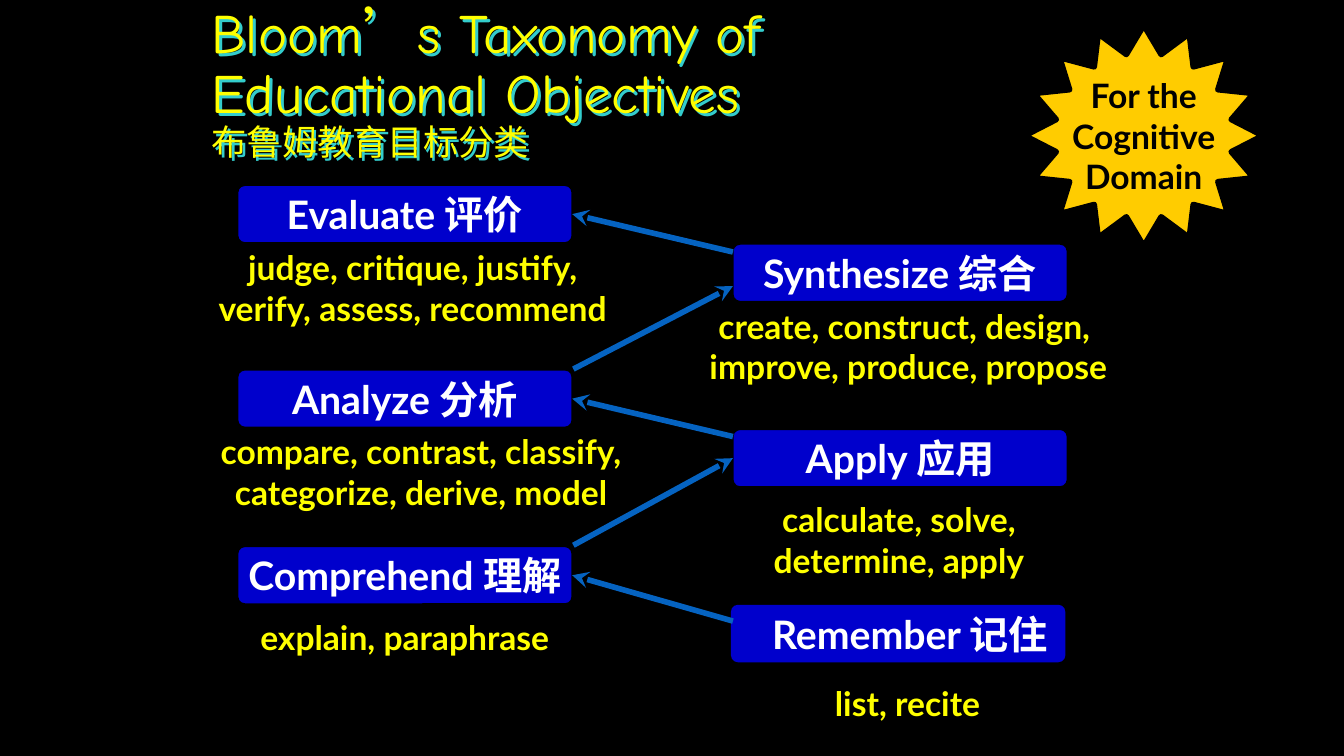
from dataclasses import dataclass

import pptx
import pptx.dml.color
import pptx.enum.shapes
import pptx.enum.text
import pptx.oxml
import pptx.oxml.ns
import pptx.util
from pptx.util import Cm, Pt

ANCHOR = pptx.enum.text.MSO_ANCHOR
ALIGN = pptx.enum.text.PP_ALIGN
SHAPE = pptx.enum.shapes.MSO_SHAPE
NAMESPACE = pptx.oxml.ns.nsdecls("a")

BLACK, WHITE, YELLOW = "000000", "FFFFFF", "FFFF00"
BOX_BLUE, ARROW_BLUE = "0000CC", "0563C1"
STAR_GOLD, TITLE_SHADOW = "FFCC00", "33CCCC"

LEFT_COLUMN, RIGHT_COLUMN = 5.99, 18.47
BOX_WIDTH, BOX_HEIGHT = 8.43, 1.45
ARROW_LEFT, ARROW_RIGHT = 14.45, 18.47
LEFT_SIDE, RIGHT_SIDE = 1, 3

FRAME_FORMAT = {
    "margin_left": Cm(0.25), "margin_right": Cm(0.25),
    "margin_top": Cm(0.13), "margin_bottom": Cm(0.13),
    "auto_size": pptx.enum.text.MSO_AUTO_SIZE.NONE,
}


@dataclass
class Level:
    label: str
    left: float
    top: float
    outlined: bool = True


@dataclass
class Words:
    lines: list[str]
    left: float
    top: float
    width: float
    height: float
    wrap: bool = True
    size: float = 24
    colour: str = YELLOW
    anchor: ANCHOR = ANCHOR.TOP


@dataclass
class Step:
    source_y: float
    target_y: float
    target: str
    leftward: bool
    joined: bool = True


LEVELS = [
    Level("Evaluate 评价", LEFT_COLUMN, 4.67),
    Level("Synthesize 综合", RIGHT_COLUMN, 6.15),
    Level("Analyze 分析", LEFT_COLUMN, 9.32),
    Level("Apply 应用", RIGHT_COLUMN, 10.82),
    Level("Comprehend 理解", LEFT_COLUMN, 13.77),
    Level("", 18.42, 15.24, outlined=False),
]

WORDS = [
    Words(["Remember 记住"], 19.05, 15.44, 7.77, 1.07, False, 28, WHITE, ANCHOR.MIDDLE),
    Words(["judge, critique, justify,", "verify, assess, recommend"], 4.24, 6.1, 12.32, 2.31),
    Words(["create, construct, design, ", "improve, produce, propose"], 17.15, 7.57, 11.48, 3.33),
    Words(["compare, contrast, classify, categorize, derive, model"], 4.45, 10.74, 12.32, 2.31),
    Words(["calculate, solve,", "determine, apply"], 18.77, 12.45, 7.77, 2.31, False),
    Words(["explain, paraphrase"], 5.69, 15.42, 9.02, 1.3, False),
    Words(["list, recite"], 20.47, 17.09, 4.8, 1.3, False),
]

STEPS = [
    Step(15.65, 14.6, "Comprehend 理解", leftward=True),
    Step(13.74, 11.66, "Apply 应用", leftward=False),
    Step(11.0, 9.96, "Analyze 分析", leftward=True),
    Step(9.3, 7.21, "Synthesize 综合", leftward=False, joined=False),
    Step(6.35, 5.31, "Evaluate 评价", leftward=True),
]


def rgb(colour: str) -> pptx.dml.color.RGBColor:
    return pptx.dml.color.RGBColor.from_string(colour)


def apply_format(target, values: dict) -> None:
    for name, value in values.items():
        setattr(target, name, value)


def style_run(run, font: str, size: float, colour: str, bold: bool) -> None:
    apply_format(run.font, {"name": font, "size": Pt(size), "bold": bold})
    run.font.color.rgb = rgb(colour)


def write(shape, lines: list[str], size: float, colour: str, wrap: bool, anchor: ANCHOR) -> None:
    frame = shape.text_frame
    apply_format(frame, FRAME_FORMAT | {"word_wrap": wrap, "vertical_anchor": anchor})
    for index, line in enumerate(lines):
        paragraph = frame.add_paragraph() if index else frame.paragraphs[0]
        paragraph.alignment = ALIGN.CENTER
        run = paragraph.add_run()
        run.text = line
        style_run(run, "Lato", size, colour, bold=True)


def paint(shape, fill: str, line_width: float) -> None:
    shape.shadow.inherit = False
    shape.fill.solid()
    shape.fill.fore_color.rgb = rgb(fill)
    if line_width:
        shape.line.color.rgb = rgb(BLACK)
        shape.line.width = Pt(line_width)
    else:
        shape.line.fill.background()


def add_title(slide) -> None:
    title = slide.shapes.title
    apply_format(title, {"left": Cm(5.08), "top": Cm(1.07), "width": Cm(21.59), "height": Cm(3.18)})
    # The wide right margin breaks the English title after "of"
    apply_format(title.text_frame, FRAME_FORMAT | {
        "margin_right": Cm(2.3), "word_wrap": True, "vertical_anchor": ANCHOR.BOTTOM})
    heading = title.text_frame.paragraphs[0]
    apply_format(heading, {"alignment": ALIGN.LEFT, "line_spacing": 0.9})
    english = heading.add_run()
    english.text = "Bloom’s Taxonomy of Educational Objectives"
    style_run(english, "Comic Neue", 39.6, YELLOW, bold=False)
    heading.add_line_break()
    chinese = heading.add_run()
    chinese.text = "布鲁姆教育目标分类"
    style_run(chinese, "Comic Neue", 25.2, YELLOW, bold=False)
    title._element.spPr.append(pptx.oxml.parse_xml(
        f'<a:effectLst {NAMESPACE}><a:outerShdw dist="35921" dir="2700000" algn="ctr" '
        f'rotWithShape="0"><a:srgbClr val="{TITLE_SHADOW}"/></a:outerShdw></a:effectLst>'))


def add_level(slide, level: Level):
    box = slide.shapes.add_shape(SHAPE.ROUNDED_RECTANGLE, Cm(level.left), Cm(level.top),
                                 Cm(BOX_WIDTH), Cm(BOX_HEIGHT))
    box.adjustments[0] = 0.125
    paint(box, BOX_BLUE, 1 if level.outlined else 0)
    if level.label:
        write(box, [level.label], 28, WHITE, False, ANCHOR.MIDDLE)
    return box


def add_words(slide, words: Words) -> None:
    text = slide.shapes.add_textbox(Cm(words.left), Cm(words.top), Cm(words.width), Cm(words.height))
    write(text, words.lines, words.size, words.colour, words.wrap, words.anchor)


def add_step(slide, step: Step, boxes: dict) -> None:
    start, end = (ARROW_RIGHT, ARROW_LEFT) if step.leftward else (ARROW_LEFT, ARROW_RIGHT)
    arrow = slide.shapes.add_connector(pptx.enum.shapes.MSO_CONNECTOR.STRAIGHT, Cm(start),
                                       Cm(step.source_y), Cm(end), Cm(step.target_y))
    if step.joined:
        arrow.end_connect(boxes[step.target], RIGHT_SIDE if step.leftward else LEFT_SIDE)
    arrow.line.color.rgb = rgb(ARROW_BLUE)
    arrow.line.width = Pt(4)
    arrow.line._get_or_add_ln().append(
        pptx.oxml.parse_xml(f'<a:tailEnd {NAMESPACE} type="stealth"/>'))
    arrow._element.spPr.append(pptx.oxml.parse_xml(f"<a:effectLst {NAMESPACE}/>"))


def add_domain_star(slide) -> None:
    star = slide.shapes.add_shape(SHAPE.STAR_16_POINT, Cm(25.83), Cm(0.64), Cm(5.99), Cm(5.56))
    star.adjustments[0] = 0.375
    paint(star, STAR_GOLD, 4)
    write(star, ["For the", "Cognitive", "Domain"], 24, BLACK, False, ANCHOR.MIDDLE)


def main() -> None:
    deck = pptx.Presentation()
    apply_format(deck, {"slide_width": Cm(33.87), "slide_height": Cm(19.05)})
    slide = deck.slides.add_slide(deck.slide_layouts[5])
    slide.background.fill.solid()
    slide.background.fill.fore_color.rgb = rgb(BLACK)

    # Title and domain
    add_title(slide)
    add_domain_star(slide)

    # Levels, their verbs, and the steps between them
    boxes = {level.label: add_level(slide, level) for level in LEVELS}
    for words in WORDS:
        add_words(slide, words)
    for step in STEPS:
        add_step(slide, step, boxes)

    deck.save("out.pptx")


if __name__ == "__main__":
    main()
